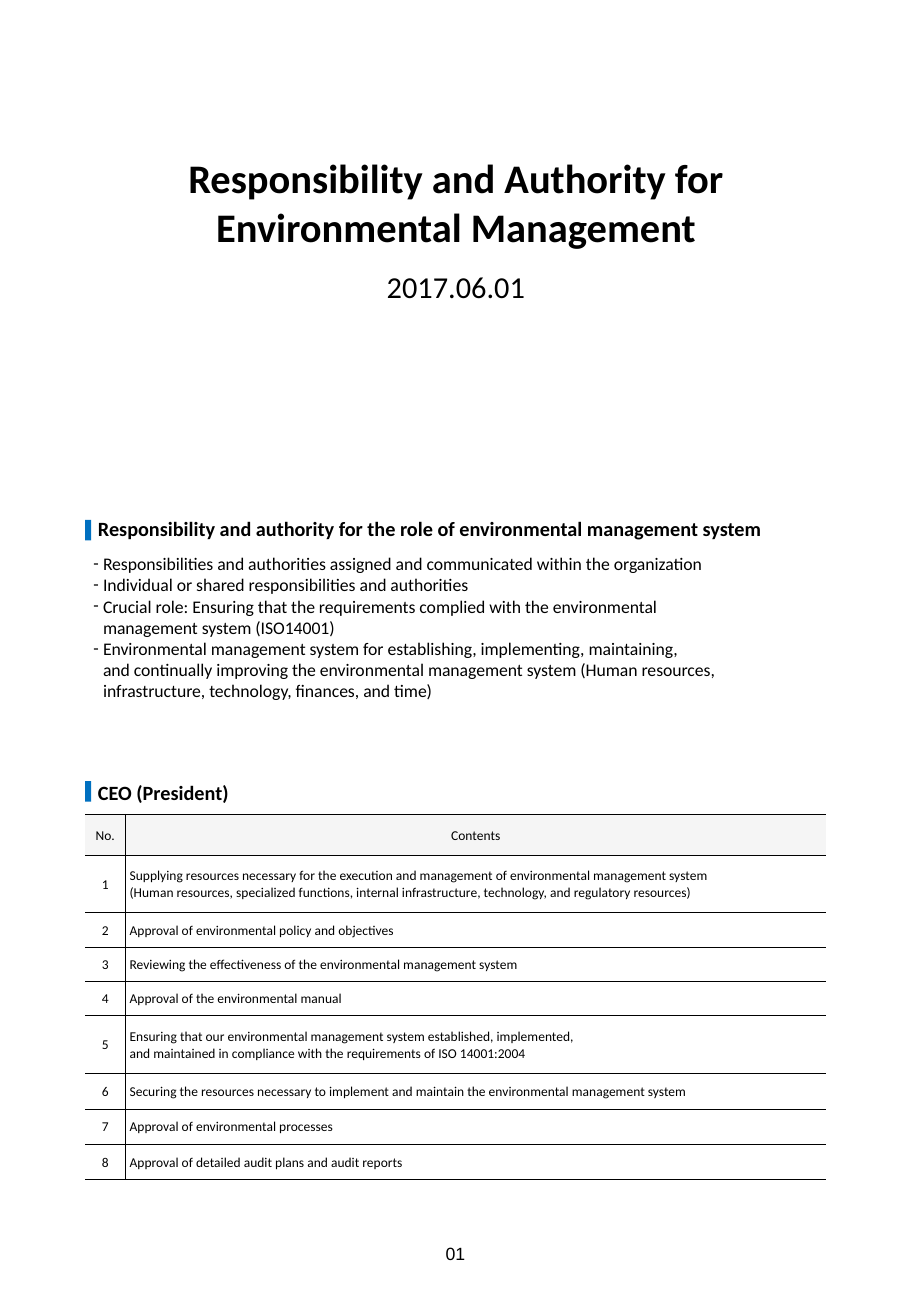
import pptx
import pptx.dml.color
import pptx.enum.shapes
import pptx.enum.text
import pptx.oxml.ns
import pptx.util
from lxml import etree
from pptx.util import Cm, Pt

COLORS = {"text": "000000", "accent": "0070C0", "header": "F5F5F5", "cell": "FFFFFF"}
CENTER = pptx.enum.text.PP_ALIGN.CENTER
LEFT = pptx.enum.text.PP_ALIGN.LEFT

DUTIES = [
    "Responsibilities and authorities assigned and communicated within the organization",
    "Individual or shared responsibilities and authorities",
    "Crucial role: Ensuring that the requirements complied with the environmental\v"
    "management system (ISO14001)",
    "Environmental management system for establishing, implementing, maintaining,\v"
    "and continually improving the environmental management system (Human resources,\v"
    "infrastructure, technology, finances, and time)",
]

# Contents of each numbered row, with the row height in cm
CEO_ROWS = [
    ("Supplying resources necessary for the execution and management of environmental "
     "management system\n(Human resources, specialized functions, internal infrastructure, "
     "technology, and regulatory resources)", 1.19),
    ("Approval of environmental policy and objectives", 0.73),
    ("Reviewing the effectiveness of the environmental management system", 0.71),
    ("Approval of the environmental manual", 0.72),
    ("Ensuring that our environmental management system established, implemented,\n"
     "and maintained in compliance with the requirements of ISO 14001:2004", 1.21),
    ("Securing the resources necessary to implement and maintain the environmental "
     "management system", 0.74),
    ("Approval of environmental processes", 0.74),
    ("Approval of detailed audit plans and audit reports", 0.73),
]


def color(name):
    return pptx.dml.color.RGBColor.from_string(COLORS[name])


def place(shape, left, top, width, height):
    shape.left, shape.top = Cm(left), Cm(top)
    shape.width, shape.height = Cm(width), Cm(height)


def format_paragraph(para, size, bold=False, align=LEFT, font="Calibri"):
    para.alignment = align
    para.space_before = Pt(0)
    for span in para.runs:
        span.font.name = font
        span.font.size = Pt(size)
        span.font.bold = bold
        span.font.color.rgb = color("text")


def prepare_frame(frame):
    frame.word_wrap = True
    frame.auto_size = pptx.enum.text.MSO_AUTO_SIZE.NONE
    frame.vertical_anchor = pptx.enum.text.MSO_ANCHOR.TOP


def add_text(page, text, left, top, width, height, size, **style):
    box = page.shapes.add_textbox(Cm(left), Cm(top), Cm(width), Cm(height))
    prepare_frame(box.text_frame)
    box.text_frame.text = text
    format_paragraph(box.text_frame.paragraphs[0], size, **style)


def add_heading(page, text, top, width, bar_top):
    """Add a section heading with its accent bar on the left."""
    add_text(page, text, 1.8, top, width, 0.76, 12, bold=True)
    bar = page.shapes.add_shape(pptx.enum.shapes.MSO_SHAPE.RECTANGLE,
                                Cm(1.78), Cm(bar_top), Cm(0.13), Cm(0.43))
    bar.shadow.inherit = False
    bar.fill.solid()
    bar.fill.fore_color.rgb = color("accent")
    bar.line.fill.background()


def fill_title(title):
    place(title, 3.5, 3.07, 12.07, 3.45)
    frame = title.text_frame
    prepare_frame(frame)
    frame.text = "Responsibility and Authority for Environmental Management\n2017.06.01"
    name, date = frame.paragraphs
    format_paragraph(name, 24, bold=True, align=CENTER)
    format_paragraph(date, 18, align=CENTER)
    date.line_spacing = 1.5


def fill_duties(body):
    place(body, 1.7, 11.43, 14.91, 3.4)
    frame = body.text_frame
    prepare_frame(frame)
    frame.text = "\n".join(DUTIES[:1])
    for duty in DUTIES[1:]:
        frame.add_paragraph().text = duty
    for para in frame.paragraphs:
        format_paragraph(para, 10.5)
        add_dash(para)


def add_dash(para):
    """Give the paragraph a dash bullet with a hanging indent."""
    properties = para._p.get_or_add_pPr()
    properties.set("marL", str(Cm(0.2)))
    properties.set("indent", str(-Cm(0.2)))
    font = etree.SubElement(properties, pptx.oxml.ns.qn("a:buFont"))
    font.set("typeface", "Calibri")
    bullet = etree.SubElement(properties, pptx.oxml.ns.qn("a:buChar"))
    bullet.set("char", "-")


def set_borders(cell, visible):
    """Draw thin lines on the visible sides (of L, R, T, B) and none elsewhere."""
    properties = cell._tc.get_or_add_tcPr()
    for side in "LRTB":
        line = etree.SubElement(properties, pptx.oxml.ns.qn("a:ln" + side))
        if side in visible:
            line.set("w", str(Pt(0.25)))
            fill = etree.SubElement(line, pptx.oxml.ns.qn("a:solidFill"))
            etree.SubElement(fill, pptx.oxml.ns.qn("a:srgbClr")).set("val", COLORS["text"])
        else:
            etree.SubElement(line, pptx.oxml.ns.qn("a:noFill"))


def fill_cell(cell, text, fill, borders, align, margin_left):
    set_borders(cell, borders)
    cell.fill.solid()
    cell.fill.fore_color.rgb = color(fill)
    cell.vertical_anchor = pptx.enum.text.MSO_ANCHOR.MIDDLE
    cell.margin_left = Cm(margin_left)
    cell.margin_right = cell.margin_top = Cm(0.03)
    cell.margin_bottom = 0
    cell.text_frame.text = text
    for para in cell.text_frame.paragraphs:
        format_paragraph(para, 8, align=align)


def add_ceo_table(page):
    rows = [("No.", "Contents", 0.86)]
    rows += [(str(number), text, height) for number, (text, height) in enumerate(CEO_ROWS, 1)]
    table = page.shapes.add_table(len(rows), 2, Cm(1.78), Cm(17.02), Cm(15.5), Cm(7.63)).table
    table.horz_banding = False
    table.columns[0].width = Cm(0.84)
    table.columns[1].width = Cm(14.66)
    for index, (number, text, height) in enumerate(rows):
        header = index == 0
        fill = "header" if header else "cell"
        table.rows[index].height = Cm(height)
        fill_cell(table.cell(index, 0), number, fill, "RTB", CENTER, 0.03)
        fill_cell(table.cell(index, 1), text, fill, "LTB",
                  CENTER if header else LEFT, 0.03 if header else 0.09)


def main():
    deck = pptx.Presentation()
    deck.slide_width, deck.slide_height = Cm(19.05), Cm(27.51)
    page = deck.slides.add_slide(deck.slide_layouts[1])
    fill_title(page.shapes.title)
    add_heading(page, "Responsibility and authority for the role of environmental "
                "management system", 10.67, 16, 10.87)
    fill_duties(page.placeholders[1])
    add_heading(page, "CEO (President)", 16.18, 9.55, 16.33)
    add_ceo_table(page)
    add_text(page, "01", 8, 25.86, 3.05, 0.74, 10.5, align=CENTER, font="Arial")
    deck.save("out.pptx")


if __name__ == "__main__":
    main()
